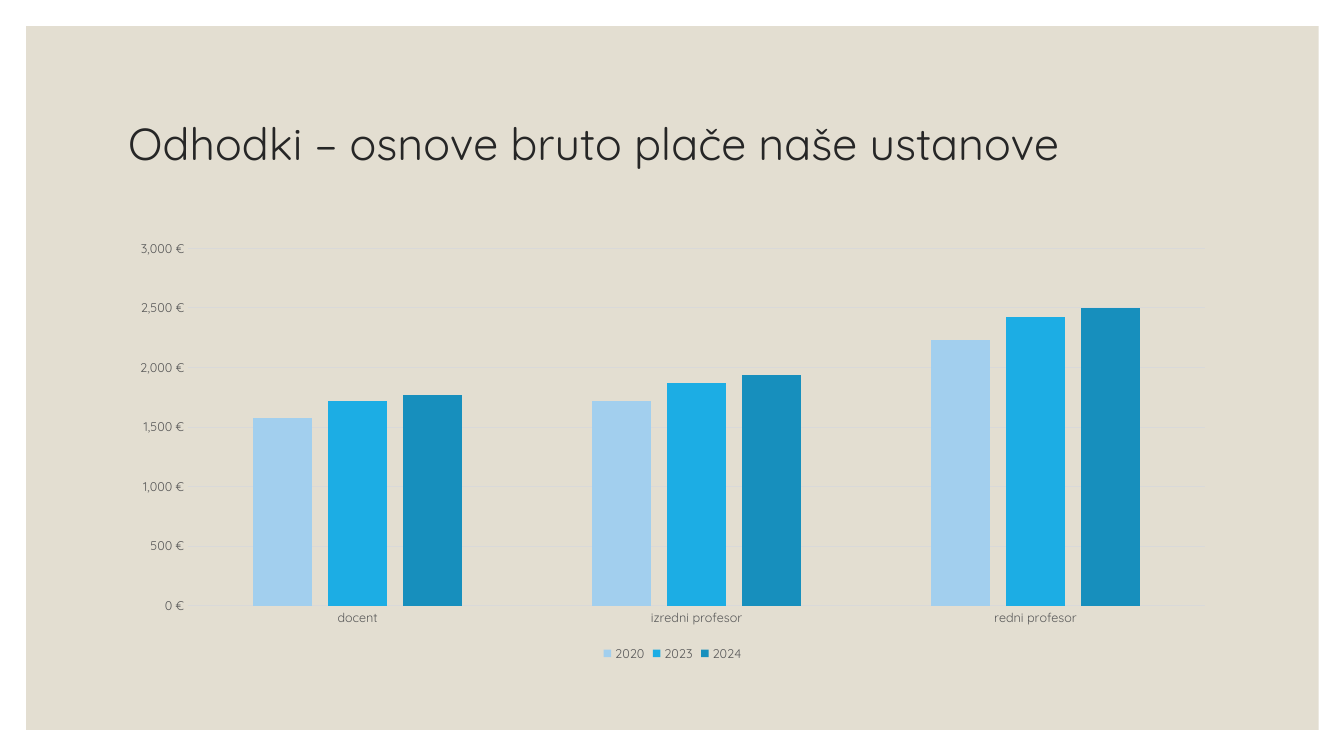
import pptx
import pptx.util
import pptx.chart.data
import pptx.dml.color
import pptx.enum.chart
import pptx.enum.shapes
import pptx.enum.text

WIDE, HIGH = pptx.util.Inches(13.33), pptx.util.Inches(7.5)


class Theme:
    font = "Quicksand"
    sand, ink, grey, rule = "E3DED1", "262626", "595959", "D9D9D9"
    bars = ("A2CFEE", "1CADE4", "178FBD")
    head, base, small = 32, 10, 9


# Boxes: left, top, width, height in percent of the slide
PANEL = (1.95, 3.47, 96.17, 93.07)
TITLE = (8.78, 9.33, 82.52, 20)
CHART = (8.78, 30.67, 82.52, 57.33)

RANKS = ("docent", "izredni profesor", "redni profesor")
PAY = {
    "2020": (1580, 1720, 2230),
    "2023": (1720, 1870, 2420),
    "2024": (1770, 1940, 2500),
}


def place(box):
    """Turn percent shares into slide lengths."""
    return [int(side * share / 100)
            for side, share in zip((WIDE, HIGH, WIDE, HIGH), box)]


def tint(code):
    return pptx.dml.color.RGBColor.from_string(code)


def apply(item, form):
    for name, value in form.items():
        setattr(item, name, value)


def style(font, size, code):
    apply(font, {"name": Theme.font, "size": pptx.util.Pt(size), "bold": False})
    font.color.rgb = tint(code)


def paint(fill, code):
    fill.solid()
    fill.fore_color.rgb = tint(code)


def rule(line):
    line.color.rgb = tint(Theme.rule)
    line.width = pptx.util.Pt(0.75)


def add_panel(slide, box):
    panel = slide.shapes.add_shape(
        pptx.enum.shapes.MSO_SHAPE.RECTANGLE, *place(box))
    panel.shadow.inherit = False
    paint(panel.fill, Theme.sand)
    panel.line.fill.background()
    # The panel lies behind the title
    slide.shapes.title.element.addprevious(panel.element)


def add_title(slide, box, text):
    title = slide.shapes.title
    apply(title, dict(zip(("left", "top", "width", "height"), place(box))))
    frame = title.text_frame
    frame.text = text
    apply(frame, {
        "word_wrap": True,
        "auto_size": pptx.enum.text.MSO_AUTO_SIZE.NONE,
        "vertical_anchor": pptx.enum.text.MSO_ANCHOR.MIDDLE,
    })
    para = frame.paragraphs[0]
    apply(para, {"alignment": pptx.enum.text.PP_ALIGN.LEFT,
                 "line_spacing": 0.9})
    style(para.runs[0].font, Theme.head, Theme.ink)


def add_chart(slide, box):
    data = pptx.chart.data.CategoryChartData()
    data.categories = RANKS
    for year, sums in PAY.items():
        data.add_series(year, sums)
    kind = pptx.enum.chart.XL_CHART_TYPE.COLUMN_CLUSTERED
    chart = slide.shapes.add_chart(kind, *place(box), data).chart
    style(chart.font, Theme.base, "000000")
    apply(chart, {"has_title": False, "has_legend": True})

    # Bars
    plot = chart.plots[0]
    apply(plot, {"gap_width": 219, "overlap": -27,
                 "vary_by_categories": False})
    for series, code in zip(plot.series, Theme.bars):
        paint(series.format.fill, code)

    # Axes
    none = pptx.enum.chart.XL_TICK_MARK.NONE
    ranks, euros = chart.category_axis, chart.value_axis
    for axis in (ranks, euros):
        apply(axis, {"major_tick_mark": none, "minor_tick_mark": none})
        style(axis.tick_labels.font, Theme.small, Theme.grey)
    rule(ranks.format.line)
    apply(euros, {"minimum_scale": 0, "maximum_scale": 3000,
                  "major_unit": 500, "has_major_gridlines": True})
    apply(euros.tick_labels, {"number_format": '#,##0\\ "€"',
                              "number_format_is_linked": False})
    euros.format.line.fill.background()
    rule(euros.major_gridlines.format.line)

    # Legend
    apply(chart.legend, {
        "position": pptx.enum.chart.XL_LEGEND_POSITION.BOTTOM,
        "include_in_layout": False,
    })
    style(chart.legend.font, Theme.small, Theme.grey)


def main():
    deck = pptx.Presentation()
    apply(deck, {"slide_width": WIDE, "slide_height": HIGH})
    slide = deck.slides.add_slide(deck.slide_layouts[5])
    paint(slide.background.fill, "FFFFFF")
    add_panel(slide, PANEL)
    add_title(slide, TITLE, "Odhodki – osnove bruto plače naše ustanove")
    add_chart(slide, CHART)
    deck.save("out.pptx")


if __name__ == "__main__":
    main()
